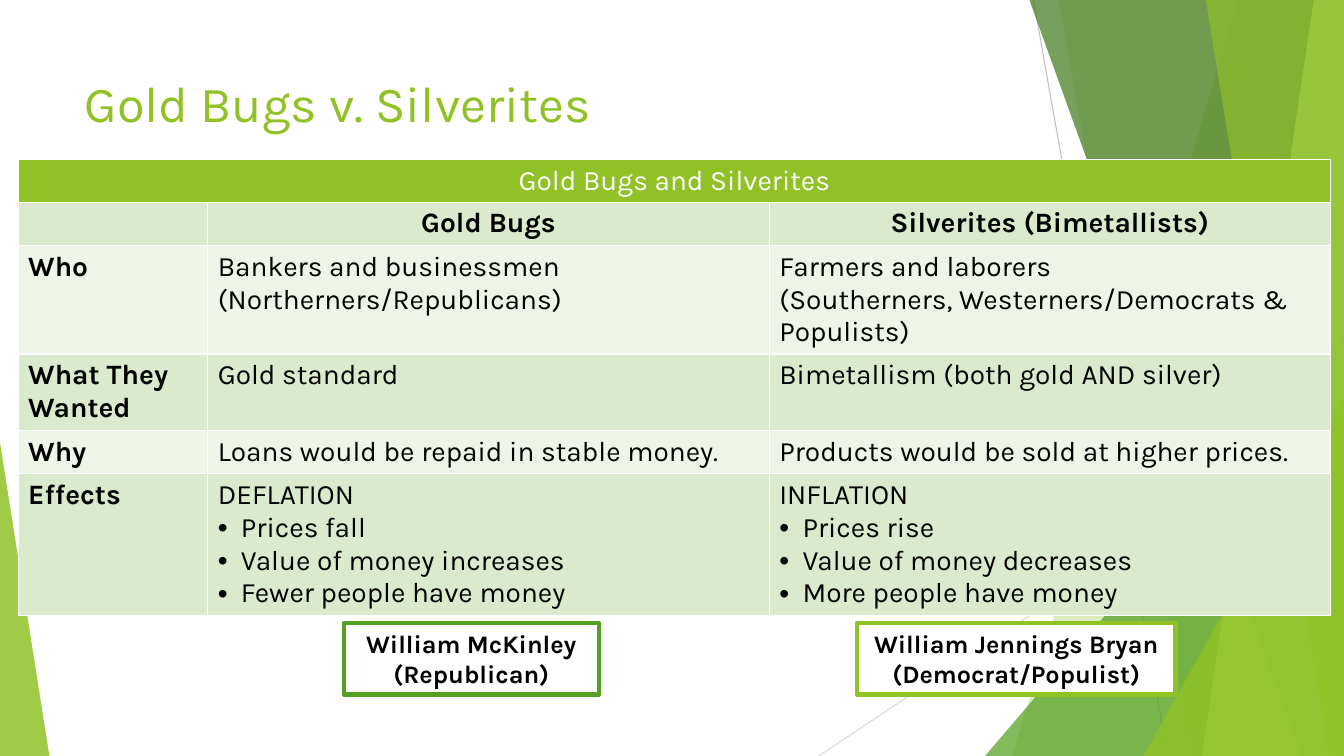
from dataclasses import dataclass

from lxml import etree
from pptx import Presentation
from pptx.dml.color import RGBColor
from pptx.enum.shapes import MSO_CONNECTOR, MSO_SHAPE
from pptx.enum.text import MSO_ANCHOR, PP_ALIGN
from pptx.oxml.ns import qn
from pptx.util import Inches, Pt

STRAIGHT = MSO_CONNECTOR.STRAIGHT
TRIANGLE, RECT = MSO_SHAPE.ISOSCELES_TRIANGLE, MSO_SHAPE.RECTANGLE
LEFT, CENTER = PP_ALIGN.LEFT, PP_ALIGN.CENTER
TOP, MIDDLE = MSO_ANCHOR.TOP, MSO_ANCHOR.MIDDLE
TITLE_ONLY = 5
WIDTH, HEIGHT = 13.33, 7.5


@dataclass(frozen=True)
class Theme:
    font: str = "Karla"
    lime: str = "90C226"
    green: str = "54A021"
    forest: str = "3F7819"
    pale_lime: str = "C0E474"
    band_dark: str = "DBE9CD"
    band_light: str = "EEF4E8"
    gray: str = "BFBFBF"
    light_gray: str = "D9D9D9"
    white: str = "FFFFFF"
    black: str = "000000"
    title_size: int = 36
    table_size: int = 20
    name_size: int = 18


T = Theme()

# Backdrop: lines as x1, y1, x2, y2; panels as top-left x, bottom-left x
LINES = [(10.25, 0, 11.58, HEIGHT, T.gray), (WIDTH, 4.03, 8.12, HEIGHT, T.light_gray)]
BACK_PANELS = [(12.28, 10.04, T.lime, 30), (10.5, 11.83, T.lime, 20)]
FRONT_PANELS = [(10.21, 12.91, T.forest, 70), (13.03, 11.92, T.pale_lime, 70),
                (11.96, 13.18, T.lime, 65)]

# Table: text before a bullet list is a plain line; bullets start with "•"
TABLE_TITLE = "Gold Bugs and Silverites"
COL_WIDTHS = [1.88, 5.57, 5.57]
ROW_HEIGHTS = [0.42, 0.43, 1.07, 0.76, 0.43, 1.4]
ROWS = [
    ("", "Gold Bugs", "Silverites (Bimetallists)"),
    ("Who", "Bankers and businessmen\n(Northerners/Republicans)",
     "Farmers and laborers\n(Southerners, Westerners/Democrats & Populists)"),
    ("What They Wanted", "Gold standard", "Bimetallism (both gold AND silver)"),
    ("Why", "Loans would be repaid in stable money.",
     "Products would be sold at higher prices."),
    ("Effects",
     "DEFLATION\n•Prices fall\n•Value of money increases\n•Fewer people have money",
     "INFLATION\n•Prices rise\n•Value of money decreases\n•More people have money"),
]


def rgb(color):
    return RGBColor.from_string(color)


def paint(fill, color, alpha=100):
    fill.solid()
    fill.fore_color.rgb = rgb(color)
    if alpha < 100:
        clr = fill._xPr.find(qn("a:solidFill"))[0]
        etree.SubElement(clr, qn("a:alpha"), val=str(alpha * 1000))


def style(p, size, color, bold=False, align=LEFT):
    p.alignment = align
    for r in p.runs:
        r.font.name, r.font.size, r.font.bold = T.font, Pt(size), bold
        r.font.color.rgb = rgb(color)


def add_bullet(p):
    pPr = p._p.get_or_add_pPr()
    indent = Inches(0.23)
    pPr.set("marL", str(indent))
    pPr.set("indent", str(-indent))
    etree.SubElement(pPr, qn("a:buFont"), typeface="Arial")
    etree.SubElement(pPr, qn("a:buChar"), char="•")


def add_line(s, x1, y1, x2, y2, color):
    line = s.shapes.add_connector(STRAIGHT, Inches(x1), Inches(y1), Inches(x2), Inches(y2))
    line.line.color.rgb = rgb(color)
    line.line.width = Pt(0.75)
    etree.SubElement(line._element.spPr, qn("a:effectLst"))


def finish_backdrop(sp, color, alpha):
    paint(sp.fill, color, alpha)
    sp.line.fill.background()
    sp.shadow.inherit = False


def add_panel(s, top_x, bottom_x, color, alpha):
    """Slanted panel that runs from the given left edge to the slide's right edge."""
    fb = s.shapes.build_freeform(Inches(top_x), 0)
    corners = [(WIDTH, 0), (WIDTH, HEIGHT), (bottom_x, HEIGHT)]
    fb.add_line_segments([(Inches(x), Inches(y)) for x, y in corners], close=True)
    finish_backdrop(fb.convert_to_shape(), color, alpha)


def add_triangle(s, x, y, w, peak, color, alpha):
    """Triangle that stands on the slide's bottom edge."""
    sp = s.shapes.add_shape(TRIANGLE, Inches(x), Inches(y), Inches(w), Inches(HEIGHT - y))
    sp.adjustments[0] = peak
    finish_backdrop(sp, color, alpha)


def add_backdrop(s):
    for line in LINES:
        add_line(s, *line)
    for panel in BACK_PANELS:
        add_panel(s, *panel)
    add_triangle(s, 9.77, 3.33, 3.56, 1, T.green, 72)
    for panel in FRONT_PANELS:
        add_panel(s, *panel)
    add_triangle(s, 11.34, 3.93, 1.99, 1, T.lime, 80)
    add_triangle(s, 0, 4.39, 0.49, 0, T.lime, 85)


def place_title(s, text):
    title = s.shapes.title
    title.element.getparent().append(title.element)  # in front of the backdrop
    title.left, title.top = Inches(0.74), Inches(0.67)
    title.width, title.height = Inches(9.4), Inches(1.44)
    tf = title.text_frame
    tf.text = text
    tf.vertical_anchor = TOP
    style(tf.paragraphs[0], T.title_size, T.lime)


def fill_cell(cell, text, fill, color=T.black, bold=False, align=LEFT):
    tcPr = cell._tc.get_or_add_tcPr()
    for side in ("lnL", "lnR", "lnT", "lnB"):
        ln = etree.SubElement(tcPr, qn("a:" + side), w=str(Pt(1)))
        solid = etree.SubElement(ln, qn("a:solidFill"))
        etree.SubElement(solid, qn("a:srgbClr"), val=T.white)
    paint(cell.fill, fill)
    cell.text_frame.text = text
    for p in cell.text_frame.paragraphs:
        if p.text.startswith("•"):
            p.text = p.text[1:]
            add_bullet(p)
        style(p, T.table_size, color, bold, align)


def add_comparison(s):
    frame = s.shapes.add_table(len(ROW_HEIGHTS), len(COL_WIDTHS), Inches(0.18), Inches(1.58),
                               Inches(sum(COL_WIDTHS)), Inches(sum(ROW_HEIGHTS)))
    table = frame.table
    for col, w in zip(table.columns, COL_WIDTHS):
        col.width = Inches(w)
    for row, h in zip(table.rows, ROW_HEIGHTS):
        row.height = Inches(h)
    table.cell(0, 0).merge(table.cell(0, len(COL_WIDTHS) - 1))
    fill_cell(table.cell(0, 0), TABLE_TITLE, T.lime, T.white, align=CENTER)
    for i, texts in enumerate(ROWS, start=1):
        band = T.band_dark if i % 2 else T.band_light
        for j, text in enumerate(texts):
            fill_cell(table.cell(i, j), text, band, bold=i == 1 or j == 0,
                      align=CENTER if i == 1 else LEFT)


def add_name_box(s, x, w, text, border):
    sp = s.shapes.add_shape(RECT, Inches(x), Inches(6.18), Inches(w), Inches(0.71))
    sp.shadow.inherit = False
    paint(sp.fill, T.white)
    sp.line.color.rgb = rgb(border)
    sp.line.width = Pt(3)
    tf = sp.text_frame
    tf.word_wrap = True
    tf.vertical_anchor = MIDDLE
    tf.text = text
    for p in tf.paragraphs:
        style(p, T.name_size, T.black, bold=True, align=CENTER)


def main():
    prs = Presentation()
    prs.slide_width, prs.slide_height = Inches(WIDTH), Inches(HEIGHT)
    s = prs.slides.add_slide(prs.slide_layouts[TITLE_ONLY])
    add_backdrop(s)
    place_title(s, "Gold Bugs v. Silverites")
    add_comparison(s)
    add_name_box(s, 8.5, 3.16, "William Jennings Bryan\n(Democrat/Populist)", T.lime)
    add_name_box(s, 3.41, 2.53, "William McKinley (Republican)", T.green)
    prs.save("out.pptx")


if __name__ == "__main__":
    main()
